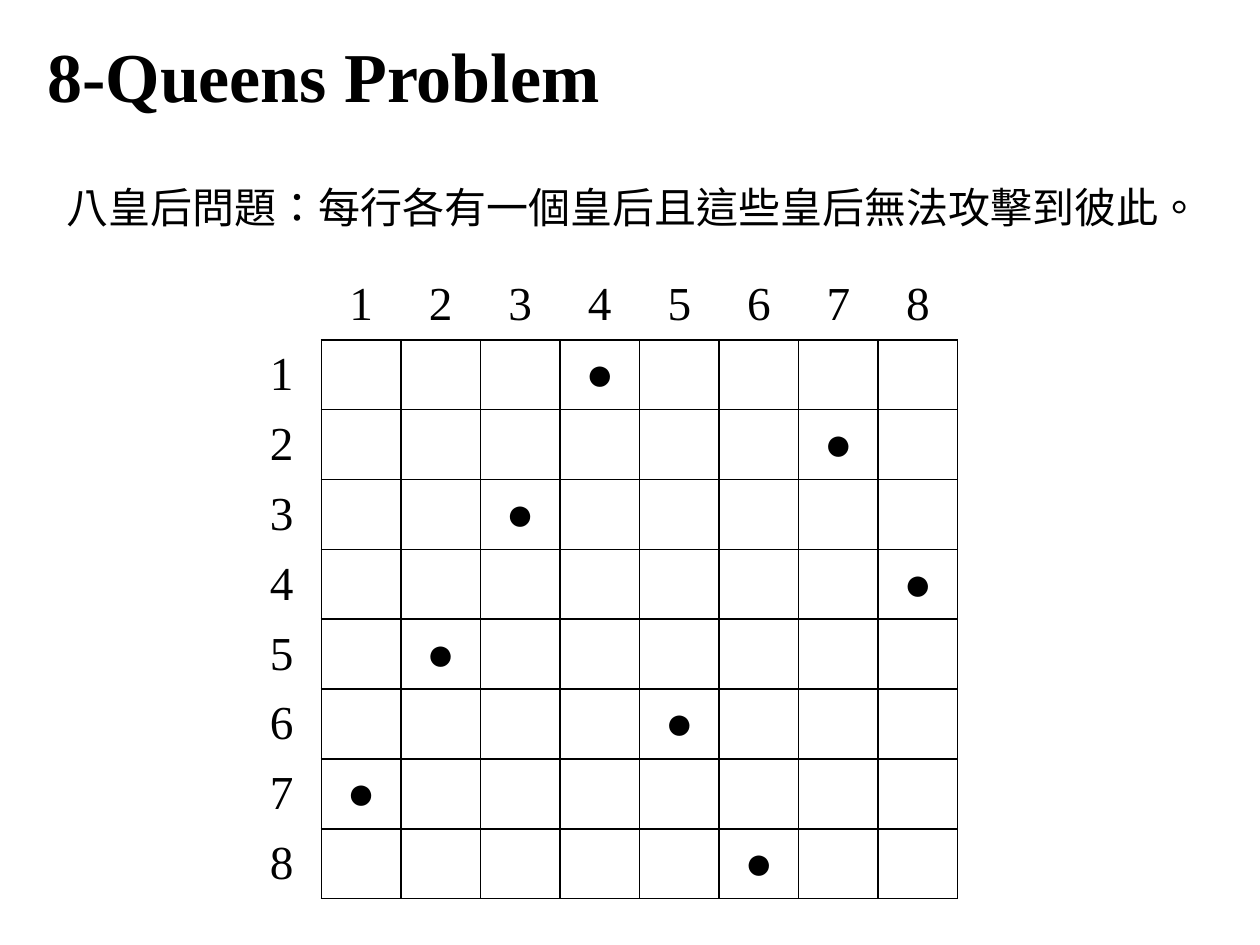
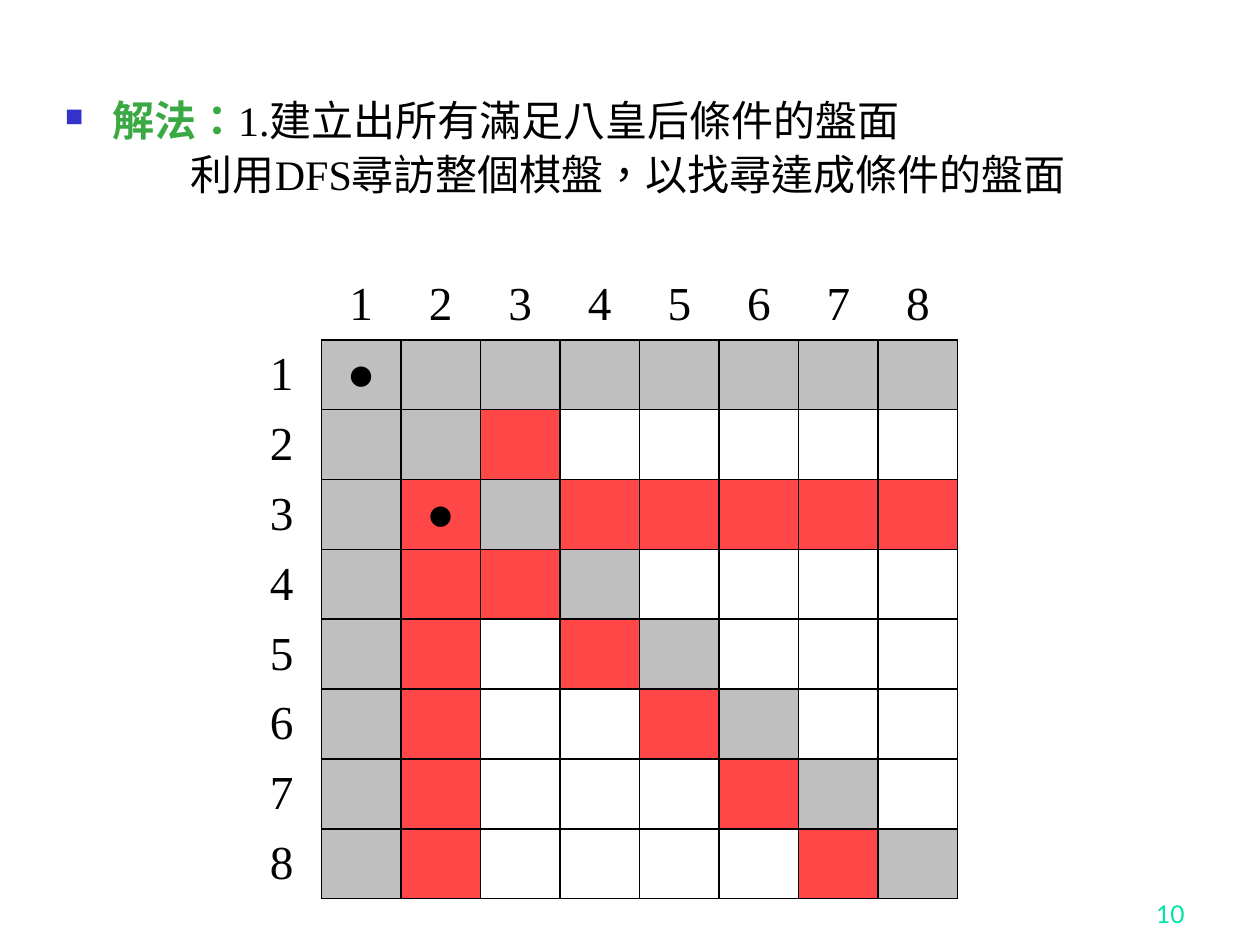
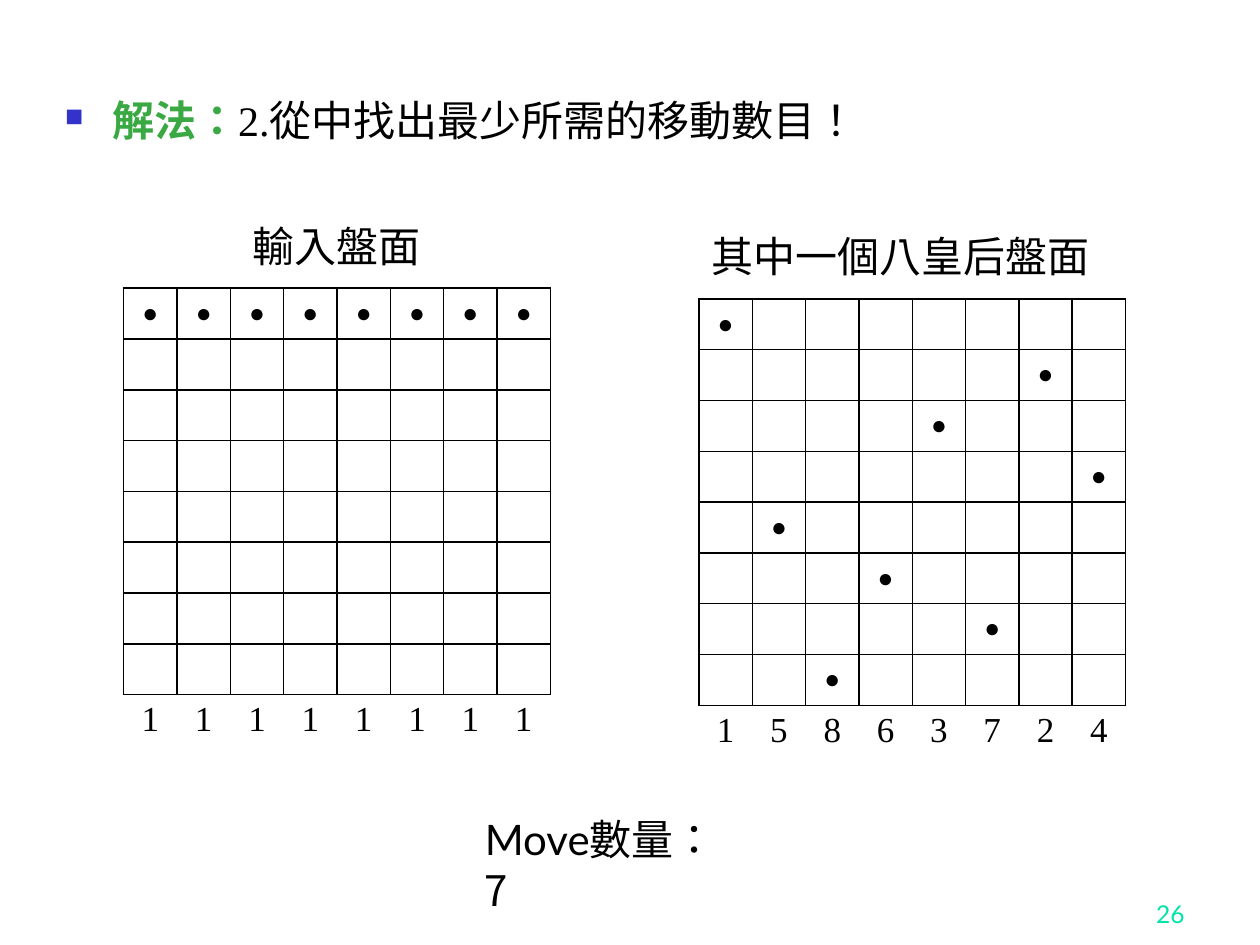
from lxml.etree import SubElement as Sub
from pptx import Presentation
from pptx.dml.color import RGBColor as RGB
from pptx.enum.lang import MSO_LANGUAGE_ID as Lang
from pptx.enum.text import MSO_ANCHOR as Anchor, PP_ALIGN as Align
from pptx.oxml.ns import qn
from pptx.util import Pt

BLACK = RGB(0x00, 0x00, 0x00)
WHITE = RGB(0xFF, 0xFF, 0xFF)
GREY = RGB(0xBF, 0xBF, 0xBF)
RED = RGB(0xFF, 0x47, 0x47)
GREEN = RGB(0x3B, 0xA9, 0x43)
TEAL = RGB(0x00, 0xE4, 0xA8)
BLUE = RGB(0x33, 0x33, 0xCC)

SERIF, SANS, CJK = "Times New Roman", "Lato", "Noto Sans CJK SC"
SIDE = 8
QUEEN = "●"
EDGES = {"left": "a:lnL", "right": "a:lnR", "top": "a:lnT", "bottom": "a:lnB"}


def add_run(para, text, name=CJK, size=24, color=BLACK, bold=False):
    run = para.add_run()
    run.text = text
    font = run.font
    look = {"name": name, "size": Pt(size), "bold": bold,
            "language_id": Lang.TRADITIONAL_CHINESE}
    for key, value in look.items():
        setattr(font, key, value)
    font.color.rgb = color
    Sub(run._r.get_or_add_rPr(), qn("a:ea"), typeface=CJK)


def add_box(slide, box, wrap=False):
    frame = slide.shapes.add_textbox(*map(Pt, box)).text_frame
    frame.word_wrap = wrap
    return frame


def add_text(slide, box, text, **look):
    add_run(add_box(slide, box).paragraphs[0], text, **look)


def add_page(slide, number):
    frame = add_box(slide, (534, 498, 150, 36), True)
    frame.vertical_anchor = Anchor.BOTTOM
    para = frame.paragraphs[0]
    para.alignment = Align.RIGHT
    add_run(para, str(number), SANS, 14, TEAL)


def add_steps(slide, first, *more):
    """Bulleted solution step, with further lines set in by one inch."""
    frame = add_box(slide, (30, 54, 636, 52), True)
    for i, line in enumerate((first, *more)):
        para = frame.add_paragraph() if i else frame.paragraphs[0]
        para.line_spacing = 0.9
        para.space_before = Pt(4.8)
        props = para._p.get_or_add_pPr()
        if i:
            props.set("marL", str(Pt(72)))
        else:
            props.set("marL", str(Pt(27)))
            props.set("indent", str(Pt(-27)))
            Sub(Sub(props, qn("a:buClr")), qn("a:srgbClr"), val=str(BLUE))
            Sub(props, qn("a:buSzPct"), val="60000")
            Sub(props, qn("a:buChar"), char="■")
            add_run(para, "解法：", SERIF, color=GREEN, bold=True)
        add_run(para, line, SERIF)


def set_cell(cell, text, size, fill, edges):
    margins = ("margin_left", "margin_right", "margin_top", "margin_bottom")
    for key in margins:
        setattr(cell, key, Pt(2))
    cell.vertical_anchor = Anchor.MIDDLE
    props = cell._tc.get_or_add_tcPr()
    for edge, tag in EDGES.items():
        line = Sub(props, qn(tag), w=str(Pt(1)))
        if edge in edges:
            Sub(Sub(line, qn("a:solidFill")), qn("a:srgbClr"), val=str(BLACK))
        else:
            Sub(line, qn("a:noFill"))
    cell.fill.solid()
    cell.fill.fore_color.rgb = fill
    if text:
        para = cell.text_frame.paragraphs[0]
        para.alignment = Align.CENTER
        add_run(para, text, SERIF, size)


def add_grid(slide, box, rows, cols):
    left, top, width, height = box
    grid = slide.shapes.add_table(rows, cols, *map(Pt, box)).table
    grid.first_row = grid.horz_banding = False
    for col in grid.columns:
        col.width = Pt(width / cols)
    for row in grid.rows:
        row.height = Pt(height / rows)
    return grid


def attacks(queen, cell):
    down, across = cell[0] - queen[0], cell[1] - queen[1]
    return 0 in (down, across) or abs(down) == abs(across)


def tint(cell, queens, colors):
    """Colour of the first queen that attacks the cell."""
    for queen, color in zip(queens, colors):
        if attacks(queen, cell):
            return color
    return WHITE


def full_board(slide, queens, colors=()):
    """Board with numbered rows and columns; queens are the rows by column."""
    grid = add_grid(slide, (138.24, 154.3, 408.96, 359.28), SIDE + 1, SIDE + 1)
    spots = [(row, col) for col, row in enumerate(queens, 1)]
    for row in range(SIDE + 1):
        for col in range(SIDE + 1):
            fill, edges = WHITE, EDGES
            if row and col:
                text = QUEEN if (row, col) in spots else ""
                fill = tint((row, col), spots, colors)
            else:
                text = str(row or col or "")
                edges = ["right"] if row else ["bottom"] if col else []
            set_cell(grid.cell(row, col), text, 27, fill, edges)


def small_board(slide, left, top, queens):
    """Board with the row of each queen written below its column."""
    grid = add_grid(slide, (left, top, 244, 261.36), SIDE + 1, SIDE)
    for col, spot in enumerate(queens):
        for row in range(SIDE):
            text = QUEEN if row + 1 == spot else ""
            set_cell(grid.cell(row, col), text, 15, WHITE, EDGES)
        set_cell(grid.cell(SIDE, col), str(spot), 20, WHITE, ["top"])


def problem(slide):
    add_text(slide, (20, 15, 333.5, 55.5), "8-Queens Problem",
             name=SERIF, size=40, bold=True)
    add_text(slide, (31, 100, 669, 36),
             "八皇后問題：每行各有一個皇后且這些皇后無法攻擊到彼此。")
    full_board(slide, [7, 5, 3, 1, 6, 8, 2, 4])


def search(slide):
    add_page(slide, 10)
    add_steps(slide, "1.建立出所有滿足八皇后條件的盤面",
              "利用DFS尋訪整個棋盤，以找尋達成條件的盤面")
    full_board(slide, [1, 3], [GREY, RED])


def moves(slide):
    add_page(slide, 26)
    add_steps(slide, "2.從中找出最少所需的移動數目！")
    small_board(slide, 70.7, 164.7, [1] * SIDE)
    add_text(slide, (137, 122.5, 111.5, 36), "輸入盤面")
    small_board(slide, 399.4, 170.8, [1, 5, 8, 6, 3, 7, 2, 4])
    add_text(slide, (399.6, 128.2, 232.5, 36), "其中一個八皇后盤面")
    para = add_box(slide, (270, 461.5, 155.5, 36), True).paragraphs[0]
    add_run(para, "Move", SANS)
    add_run(para, "數量：7")


def main():
    deck = Presentation()
    deck.slide_width, deck.slide_height = Pt(720), Pt(540)
    for draw in (problem, search, moves):
        draw(deck.slides.add_slide(deck.slide_layouts[6]))
    deck.save("out.pptx")


if __name__ == "__main__":
    main()
